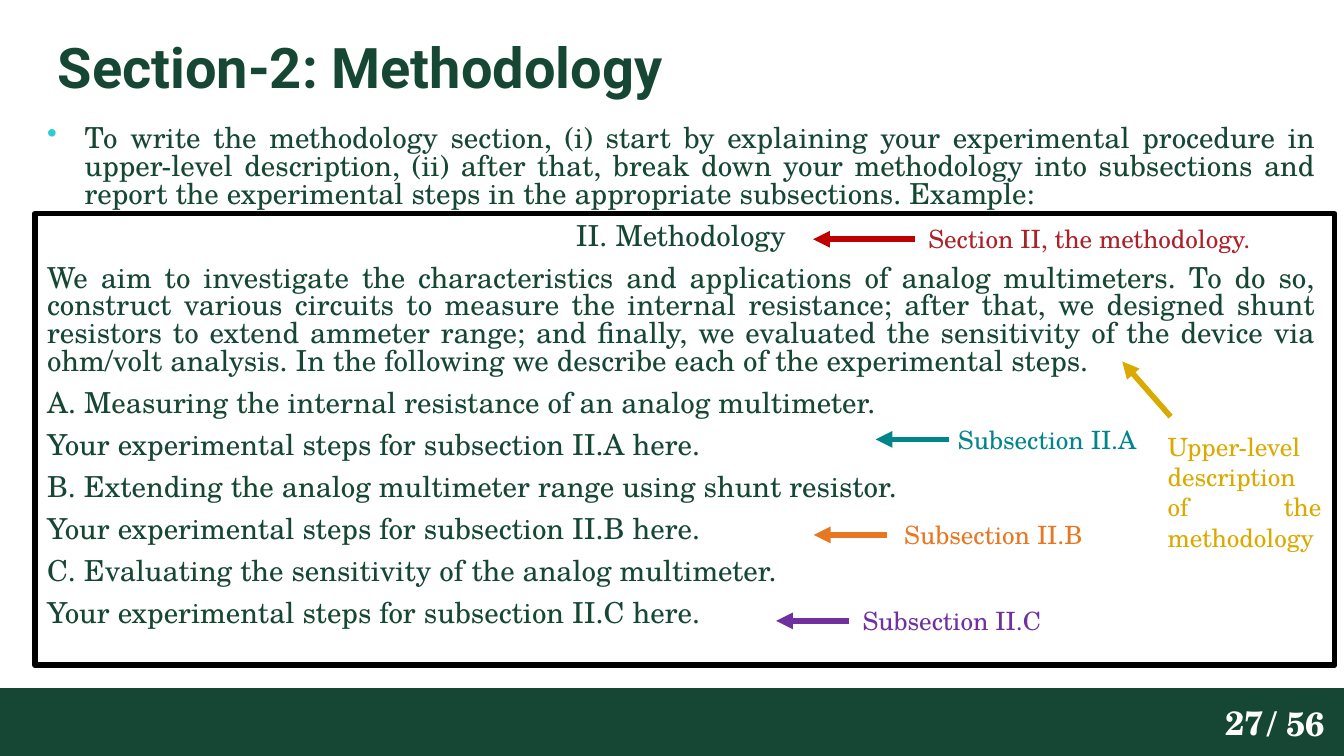
"""Build the methodology slide on a grid of 100 columns by 56.25 rows."""
from dataclasses import dataclass

from lxml import etree
from pptx import Presentation
from pptx import util as u
from pptx.dml.color import RGBColor
from pptx.enum import shapes, text
from pptx.oxml import ns

CELL = u.Inches(0.1)
ALIGN = text.PP_ALIGN


@dataclass(frozen=True)
class Theme:
    """Colours, fonts and type sizes."""
    green: str = "154734"
    white: str = "FFFFFF"
    black: str = "000000"
    cyan: str = "2DCCD3"
    red: str = "C00000"
    brick: str = "AB2328"
    gold: str = "DAAA00"
    teal: str = "00858A"
    orange: str = "E87722"
    purple: str = "7030A0"
    head: str = "Roboto"
    serif: str = "TeX Gyre Schola"
    title: float = 30
    body: float = 15.5
    note: float = 13.5
    page: float = 18
    line: float = 3


T = Theme()

LEAD = ("To write the methodology section, (i) start by explaining your experimental "
        "procedure in upper-level description, (ii) after that, break down your "
        "methodology into subsections and report the experimental steps in the "
        "appropriate subsections. Example:")
AIM = ("We aim to investigate the characteristics and applications of analog "
       "multimeters. To do so, construct various circuits to measure the internal "
       "resistance; after that, we designed shunt resistors to extend ammeter range; "
       "and finally, we evaluated the sensitivity of the device via ohm/volt analysis. "
       "In the following we describe each of the experimental steps.")
PARTS = [
    ("A", "Measuring the internal resistance of an analog multimeter."),
    ("B", "Extending the analog multimeter range using shunt resistor."),
    ("C", "Evaluating the sensitivity of the analog multimeter."),
]


def grid(*cells):
    """Turn grid cells into lengths."""
    return [u.Emu(round(c * CELL)) for c in cells]


def add_box(slide, area, inset=True, mid=False):
    """Add a wrapping text box and return its frame."""
    frame = slide.shapes.add_textbox(*grid(*area)).text_frame
    frame.word_wrap = True
    if not inset:
        frame.margin_left = frame.margin_right = 0
        frame.margin_top = frame.margin_bottom = 0
    if mid:
        frame.vertical_anchor = text.MSO_ANCHOR.MIDDLE
    return frame


def add_run(para, words, size, color, font=T.serif, bold=False):
    """Add one styled run to a paragraph."""
    run = para.add_run()
    run.text = words
    run.font.size = u.Pt(size)
    run.font.name = font
    run.font.bold = bold
    run.font.color.rgb = RGBColor.from_string(color)


def add_label(slide, area, words, color, align=ALIGN.JUSTIFY):
    """Add a coloured side note."""
    para = add_box(slide, area).paragraphs[0]
    para.alignment = align
    add_run(para, words, T.note, color)


def add_page(slide, area, words, align):
    """Add one half of the page count."""
    para = add_box(slide, area, mid=True).paragraphs[0]
    para.alignment = align
    add_run(para, words, T.page, T.white, bold=True)


def add_rect(slide, area, fill=None, line=None):
    """Add a plain rectangle, filled or outlined."""
    rect = slide.shapes.add_shape(shapes.MSO_SHAPE.RECTANGLE, *grid(*area))
    rect.shadow.inherit = False
    if fill:
        rect.fill.solid()
        rect.fill.fore_color.rgb = RGBColor.from_string(fill)
    else:
        rect.fill.background()
    if line:
        rect.line.color.rgb = RGBColor.from_string(line)
        rect.line.width = u.Pt(T.line)
    else:
        rect.line.fill.background()


def add_arrow(slide, ends, color):
    """Add a straight arrow that points at its second end."""
    arrow = slide.shapes.add_connector(shapes.MSO_CONNECTOR.STRAIGHT, *grid(*ends))
    arrow.line.color.rgb = RGBColor.from_string(color)
    arrow.line.width = u.Pt(T.line)
    etree.SubElement(arrow.line._get_or_add_ln(), ns.qn("a:tailEnd"), type="triangle")
    etree.SubElement(arrow._element.spPr, ns.qn("a:effectLst"))


def indent(para, left, first=0, dot=None):
    """Set the indents of a paragraph and, if asked, its bullet colour."""
    props = para._p.get_or_add_pPr()
    left, first = grid(left, first)
    props.set("marL", str(left))
    props.set("indent", str(first))
    if dot:
        color = etree.SubElement(props, ns.qn("a:buClr"))
        etree.SubElement(color, ns.qn("a:srgbClr"), val=dot)
        etree.SubElement(props, ns.qn("a:buChar"), char="•")


def add_body(slide):
    """Add the bulleted lead and the sample section."""
    frame = add_box(slide, (0, 9.4, 97.8, 39.2), inset=False)
    lines = [LEAD, "II. Methodology", AIM]
    for key, words in PARTS:
        lines += [f"{key}. {words}", f"Your experimental steps for subsection II.{key} here."]
    for i, words in enumerate(lines):
        para = frame.add_paragraph() if i else frame.paragraphs[0]
        para.alignment = ALIGN.CENTER if i == 1 else ALIGN.JUSTIFY
        para.line_spacing = 0.8
        para.space_before = u.Pt(3.8 if i else 0)
        para.space_after = u.Pt(3.8)
        if i:
            indent(para, 3.5)
        else:
            indent(para, 6.3, -2.8, T.cyan)
        add_run(para, words, T.body, T.green)


def add_notes(slide):
    """Add the arrows and side notes over the sample section."""
    add_arrow(slide, (68.1, 17.8, 60.5, 17.8), T.red)
    add_label(slide, (68.1, 16.1, 27.6, 3.3), "Section II, the methodology.",
              T.brick, ALIGN.LEFT)
    add_arrow(slide, (87.1, 31, 83.5, 26.9), T.gold)
    add_label(slide, (85.9, 31.6, 13.4, 10.1),
              "Upper-level description of the methodology", T.gold)
    marks = [(70.6, 32.7, 70.3, T.teal), (66, 39.8, 66.3, T.orange),
             (63.2, 46.2, 63.2, T.purple)]
    for (key, _), (x, y, left, color) in zip(PARTS, marks):
        add_arrow(slide, (x, y, x - 5.45, y), color)
        add_label(slide, (left, y - 1.65, 15.6, 3.3), f"Subsection II.{key}", color)


def main():
    """Build and save the slide."""
    deck = Presentation()
    deck.slide_width, deck.slide_height = grid(100, 56.25)
    slide = deck.slides.add_slide(deck.slide_layouts[6])
    add_rect(slide, (-0.4, 51.2, 100.4, 5.1), fill=T.green)
    title = add_box(slide, (4.3, 3, 91.4, 4.4), inset=False).paragraphs[0]
    title.line_spacing = 0.9
    add_run(title, "Section-2: Methodology", T.title, T.green, T.head, True)
    add_body(slide)
    add_rect(slide, (2.6, 15.9, 96.7, 33.6), line=T.black)
    add_notes(slide)
    add_page(slide, (88.1, 52.2, 6.9, 3), "27", ALIGN.RIGHT)
    add_page(slide, (93.3, 51.8, 8.1, 4), "/ 56", ALIGN.LEFT)
    deck.save("out.pptx")


if __name__ == "__main__":
    main()
